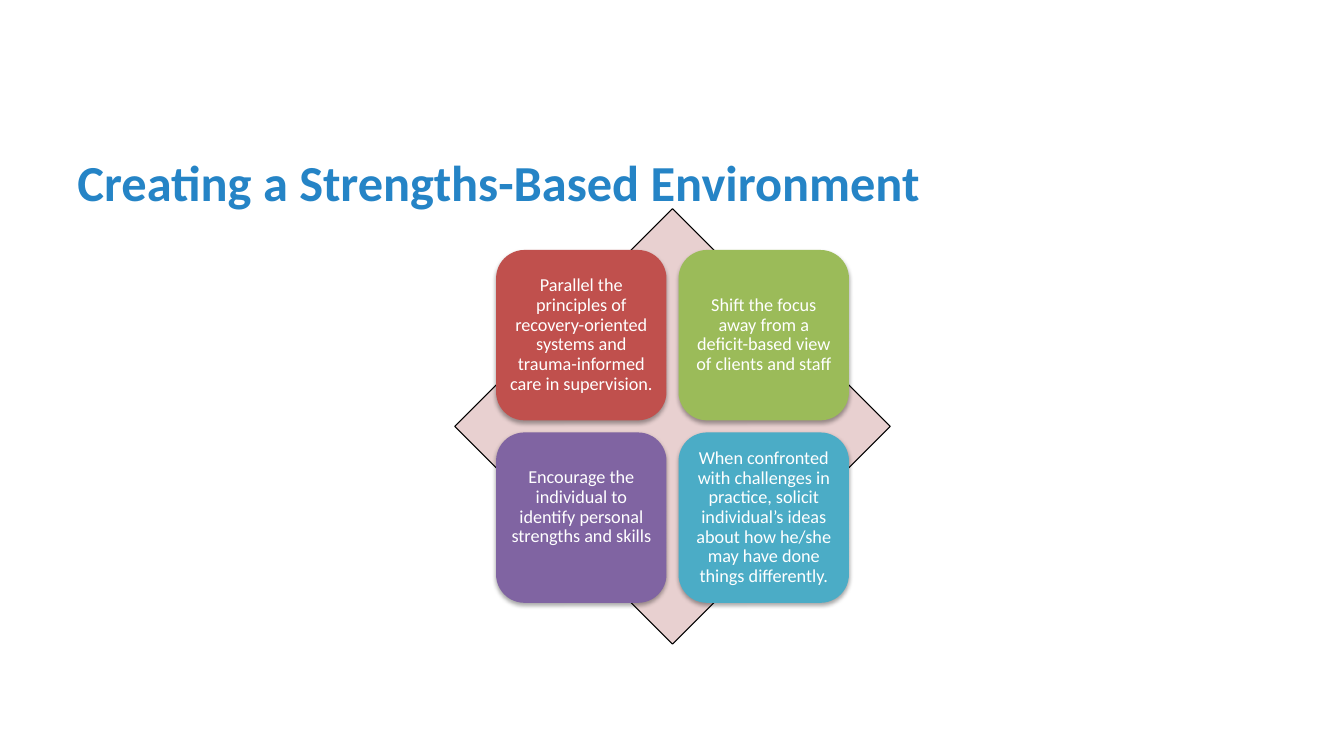
from dataclasses import dataclass

from lxml import etree
from pptx import Presentation
from pptx.dml.color import RGBColor
from pptx.enum.shapes import MSO_SHAPE
from pptx.enum.text import MSO_ANCHOR, PP_ALIGN
from pptx.oxml.ns import qn
from pptx.shapes.autoshape import Shape
from pptx.shapes.shapetree import GroupShapes
from pptx.text.text import TextFrame
from pptx.util import Inches, Pt

DIAMOND = MSO_SHAPE.DIAMOND
ROUNDED = MSO_SHAPE.ROUNDED_RECTANGLE
MIDDLE = MSO_ANCHOR.MIDDLE
LEFT, CENTER = PP_ALIGN.LEFT, PP_ALIGN.CENTER

BLACK = RGBColor(0x00, 0x00, 0x00)
WHITE = RGBColor(0xFF, 0xFF, 0xFF)
TITLE_BLUE = RGBColor(0x25, 0x84, 0xC6)
PALE_PINK = RGBColor(0xE8, 0xD0, 0xD0)
RED = RGBColor(0xC0, 0x50, 0x4D)
GREEN = RGBColor(0x9B, 0xBB, 0x59)
PURPLE = RGBColor(0x80, 0x64, 0xA2)
TEAL = RGBColor(0x4B, 0xAC, 0xC6)

# Matrix geometry in inches
DIAMOND_LEFT, DIAMOND_TOP, DIAMOND_SIZE = 4.51, 2.07, 4.32
CARD_OFFSET, CARD_SIZE, CARD_STEP = 0.41, 1.69, 1.81
CARD_INSET = 0.05

TITLE_FORMAT = {"name": "Calibri", "size": Pt(36), "bold": True}
CARD_FORMAT = {"name": "Calibri", "size": Pt(13), "bold": False}


@dataclass
class Card:
    text: str
    fill: RGBColor
    bottom_inset: float = CARD_INSET


CARDS = [
    Card("Parallel the principles of recovery-oriented systems and "
         "trauma-informed care in supervision.", RED),
    Card("Shift the focus away from a deficit-based view of clients and staff", GREEN),
    Card("Encourage the individual to identify personal strengths and skills",
         PURPLE, bottom_inset=0.25),
    Card("When confronted with challenges in practice, solicit individual’s ideas "
         "about how he/she may have done things differently.", TEAL),
]


def write_text(frame: TextFrame, text: str, font_format: dict, color: RGBColor,
               alignment: PP_ALIGN) -> None:
    frame.word_wrap = True
    frame.vertical_anchor = MIDDLE
    paragraph = frame.paragraphs[0]
    paragraph.alignment = alignment
    paragraph.line_spacing = 0.9
    run = paragraph.add_run()
    run.text = text
    for name, value in font_format.items():
        setattr(run.font, name, value)
    run.font.color.rgb = color


def add_shadow(shape: Shape) -> None:
    effects = shape.element.spPr.find(qn("a:effectLst"))
    shadow = etree.SubElement(effects, qn("a:outerShdw"), {
        "blurRad": str(Pt(3.1)), "dist": str(Pt(1.8)),
        "dir": "5400000", "rotWithShape": "0"})
    color = etree.SubElement(shadow, qn("a:srgbClr"), val=str(BLACK))
    etree.SubElement(color, qn("a:alpha"), val="35000")


def add_square(shapes: GroupShapes, kind: MSO_SHAPE, left: float, top: float,
               size: float, fill: RGBColor) -> Shape:
    shape = shapes.add_shape(kind, Inches(left), Inches(top), Inches(size), Inches(size))
    shape.shadow.inherit = False
    shape.fill.solid()
    shape.fill.fore_color.rgb = fill
    return shape


def add_card(shapes: GroupShapes, card: Card, index: int) -> None:
    row, column = divmod(index, 2)
    shape = add_square(shapes, ROUNDED,
                       DIAMOND_LEFT + CARD_OFFSET + column * CARD_STEP,
                       DIAMOND_TOP + CARD_OFFSET + row * CARD_STEP,
                       CARD_SIZE, card.fill)
    shape.line.fill.background()
    add_shadow(shape)
    frame = shape.text_frame
    for side in ("left", "top", "right"):
        setattr(frame, f"margin_{side}", Inches(CARD_INSET))
    frame.margin_bottom = Inches(card.bottom_inset)
    write_text(frame, card.text, CARD_FORMAT, WHITE, CENTER)


def main() -> None:
    presentation = Presentation()
    presentation.slide_width = Inches(13.33)
    presentation.slide_height = Inches(7.5)
    slide = presentation.slides.add_slide(presentation.slide_layouts[6])

    # Title
    title = slide.shapes.add_textbox(Inches(0.67), Inches(1.45), Inches(12), Inches(0.77))
    write_text(title.text_frame, "Creating a Strengths-Based Environment",
               TITLE_FORMAT, TITLE_BLUE, LEFT)

    # Diamond behind the four cards
    matrix = slide.shapes.add_group_shape()
    diamond = add_square(matrix.shapes, DIAMOND, DIAMOND_LEFT, DIAMOND_TOP,
                         DIAMOND_SIZE, PALE_PINK)
    diamond.line.color.rgb = BLACK
    diamond.line.width = Pt(0.75)

    # Cards in a two-by-two grid
    for index, card in enumerate(CARDS):
        add_card(matrix.shapes, card, index)

    presentation.save("out.pptx")


if __name__ == "__main__":
    main()
